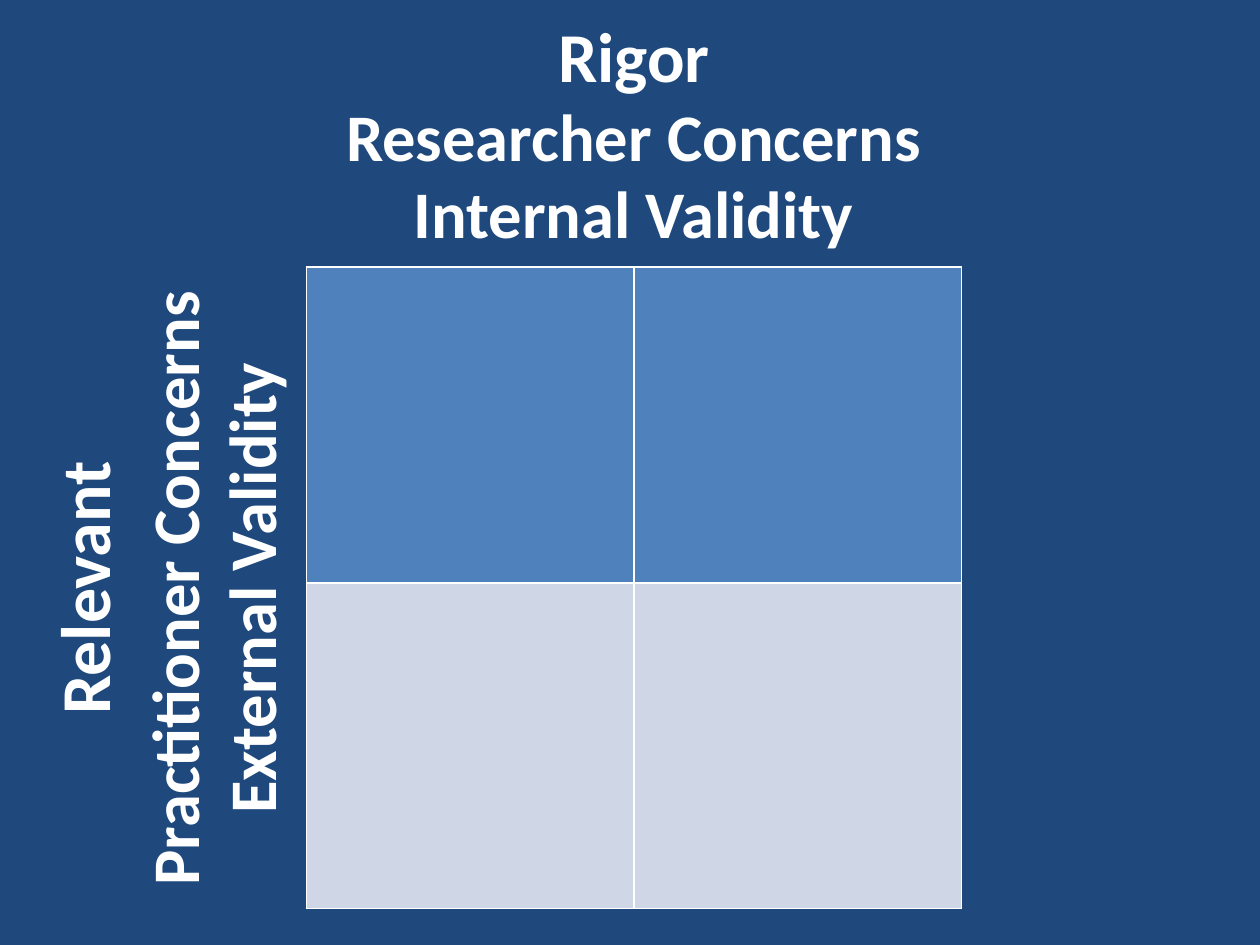
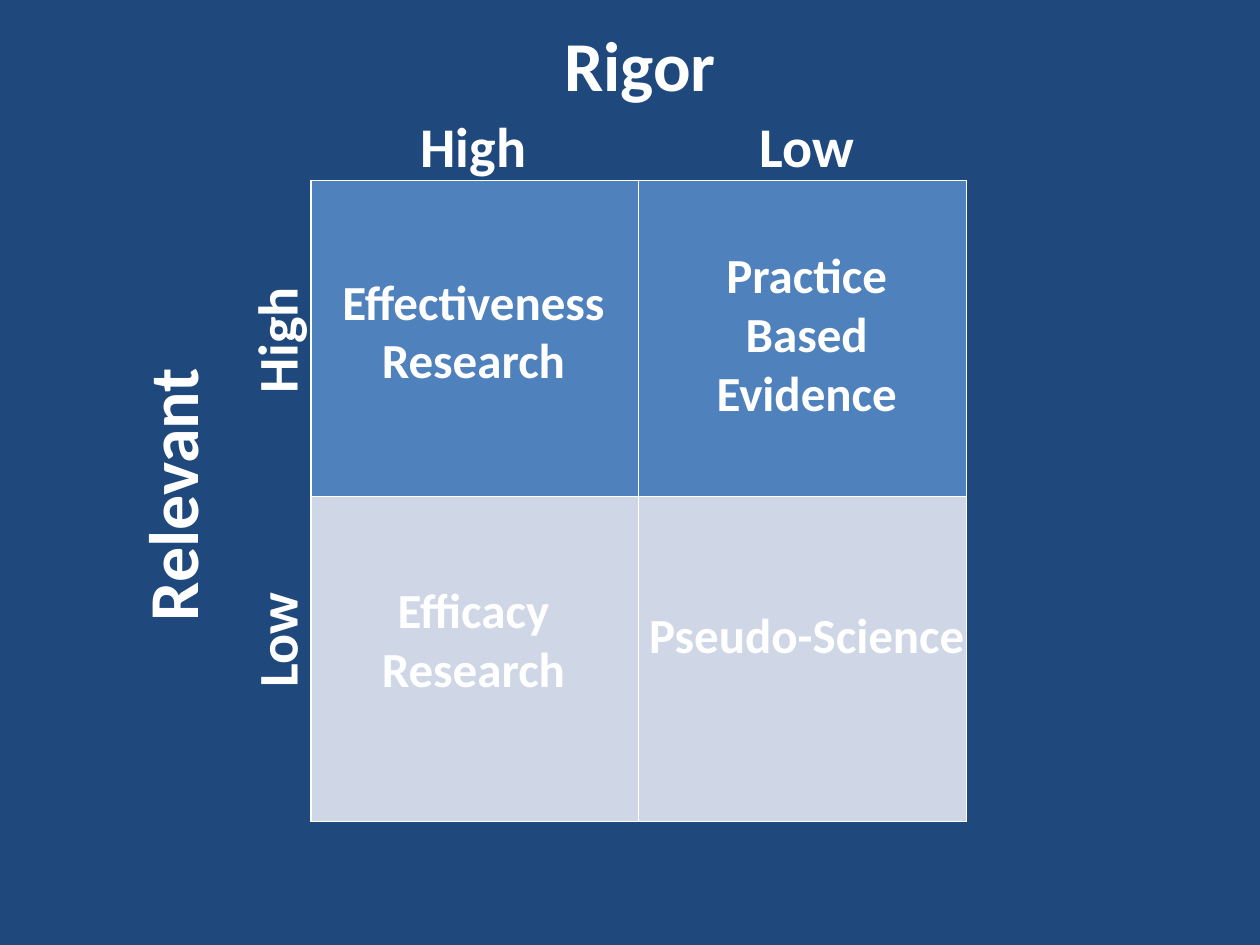
from dataclasses import dataclass

from lxml import etree
from pptx import Presentation, util as u
from pptx.dml.color import RGBColor
from pptx.enum import text
from pptx.oxml import ns


@dataclass(frozen=True)
class Theme:
    background: str = "1F497D"
    ink: str = "FFFFFF"
    row_fills: tuple = ("4F81BD", "CFD7E7")
    font: str = "Calibri"
    axis_size: int = 40
    concern_size: int = 38
    level_size: int = 32
    cell_size: int = 28
    border_width: int = 1


COLUMN_WIDTH = 187.2
ROW_HEIGHTS = (180.7, 185.8)


def set_values(target, values):
    for name, value in values.items():
        setattr(target, name, value)


class Deck:
    """Holds the style and the current slide; positions are in points."""

    def __init__(self, theme):
        self.theme = theme
        self.slide = None
        self.presentation = Presentation()
        set_values(self.presentation, {"slide_width": u.Pt(720), "slide_height": u.Pt(540)})

    def add_slide(self):
        self.slide = self.presentation.slides.add_slide(self.presentation.slide_layouts[6])
        fill = self.slide.background.fill
        fill.solid()
        fill.fore_color.rgb = RGBColor.from_string(self.theme.background)

    def label(self, words, centre_x, centre_y, width, size, lines=1, turned=False):
        """Add bold centred text around a point, reading upwards if turned."""
        height = size * 1.2 * lines + 7.2
        shape = self.slide.shapes.add_textbox(
            u.Pt(centre_x - width / 2), u.Pt(centre_y - height / 2), u.Pt(width), u.Pt(height))
        shape.rotation = 270 if turned else 0
        shape.text_frame.word_wrap = True
        paragraph = shape.text_frame.paragraphs[0]
        paragraph.alignment = text.PP_ALIGN.CENTER
        run = paragraph.add_run()
        run.text = words
        set_values(run.font, {"name": self.theme.font, "size": u.Pt(size), "bold": True})
        run.font.color.rgb = RGBColor.from_string(self.theme.ink)

    def border(self, cell):
        properties = cell._tc.get_or_add_tcPr()
        for side in ("a:lnL", "a:lnR", "a:lnT", "a:lnB"):
            line = etree.SubElement(properties, ns.qn(side), w=str(u.Pt(self.theme.border_width)))
            fill = etree.SubElement(line, ns.qn("a:solidFill"))
            etree.SubElement(fill, ns.qn("a:srgbClr"), val=self.theme.ink)

    def matrix(self, left, top):
        """Add the two-by-two table, one fill per row."""
        table = self.slide.shapes.add_table(
            2, 2, u.Pt(left), u.Pt(top), u.Pt(2 * COLUMN_WIDTH), u.Pt(sum(ROW_HEIGHTS))).table
        set_values(table, {"first_row": False, "horz_banding": False})
        for column in table.columns:
            column.width = u.Pt(COLUMN_WIDTH)
        for row, height, colour in zip(table.rows, ROW_HEIGHTS, self.theme.row_fills):
            row.height = u.Pt(height)
            for cell in row.cells:
                self.border(cell)
                cell.fill.solid()
                cell.fill.fore_color.rgb = RGBColor.from_string(colour)

    def axes(self, rigor_at, relevant_at):
        """Add the titles of the two axes."""
        self.label("Rigor", *rigor_at, 294, self.theme.axis_size)
        self.label("Relevant", *relevant_at, 160.6, self.theme.axis_size, turned=True)


def concerns_slide(deck):
    deck.add_slide()
    deck.matrix(175, 152.6)
    deck.axes(rigor_at=(362.2, 31.3), relevant_at=(47.2, 336))
    size = deck.theme.concern_size

    # Concerns across the top
    for words, y in (("Researcher Concerns", 77), ("Internal Validity", 121)):
        deck.label(words, 362.2, y, 501, size)

    # Concerns up the side
    for words, x, width in (("Practitioner Concerns", 98.6, 357), ("External Validity", 143, 274)):
        deck.label(words, x, 336.2, width, size, turned=True)


def quadrants_slide(deck):
    deck.add_slide()
    deck.matrix(177.8, 103)
    deck.axes(rigor_at=(365.8, 36.4), relevant_at=(97.6, 282.6))
    column_centres = (270.5, 461)

    # Levels on both axes
    levels = zip(("High", "Low"), column_centres, (194.4, 365.8), (75.6, 70))
    for words, x, y, width in levels:
        deck.label(words, x, 82.8, width, deck.theme.level_size)
        deck.label(words, 157.3, y, width, deck.theme.level_size, turned=True)

    # Kind of research in each quadrant: words, column, centre, width, lines
    for words, column, y, width, lines in (
        ("Effectiveness Research", 0, 188.6, 173.5, 2),
        ("Practice Based Evidence", 1, 190.4, 128, 3),
        ("Efficacy Research", 0, 365, 128, 2),
        ("Pseudo-Science", 1, 362.5, 196.6, 1),
    ):
        deck.label(words, column_centres[column], y, width, deck.theme.cell_size, lines)


def main():
    deck = Deck(Theme())
    concerns_slide(deck)
    quadrants_slide(deck)
    deck.presentation.save("out.pptx")


if __name__ == "__main__":
    main()
